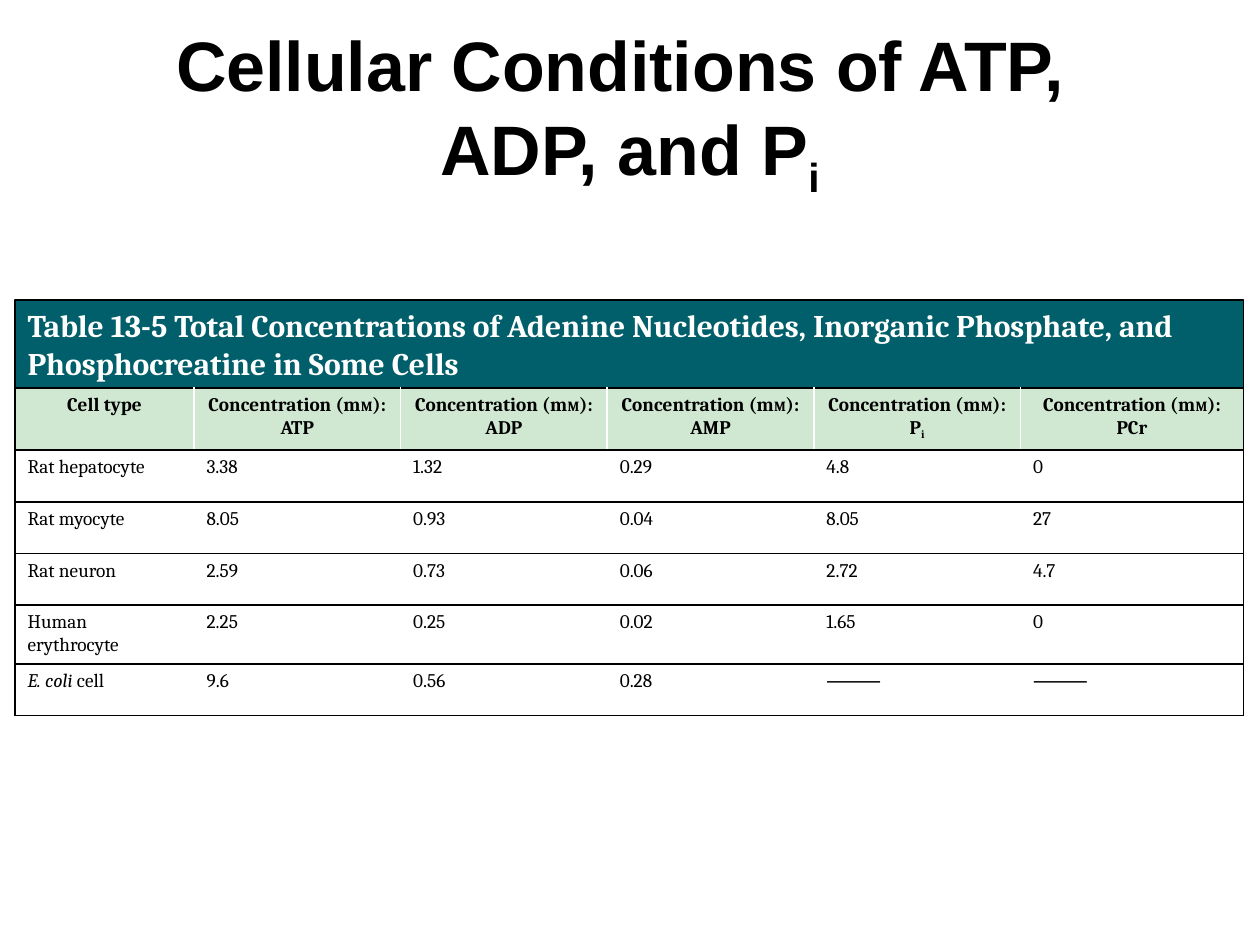
from dataclasses import dataclass

from lxml.etree import SubElement
from pptx import Presentation
from pptx.dml.color import RGBColor
from pptx.enum.shapes import MSO_SHAPE
from pptx.enum.text import MSO_ANCHOR, PP_ALIGN
from pptx.oxml.ns import qn
from pptx.util import Inches, Pt


@dataclass(frozen=True)
class Theme:
    title_font: str = "Arial"
    table_font: str = "Cambria"
    black: str = "000000"
    white: str = "FFFFFF"
    teal: str = "005F6A"
    mint: str = "D0E7D2"
    title_size: int = 40
    caption_size: int = 18
    cell_size: int = 11
    small_cap_size: int = 8


THEME = Theme()

LEFT, WIDTH = 0.12, 9.75
COLUMN_WIDTHS = [1.42, 1.64, 1.64, 1.64, 1.64, 1.77]
ROW_HEIGHT = 0.41

# Rich text is a list of (text, style) pieces; a newline is a line break
SUBSCRIPT_I = ("i", {"subscript": True})
TITLE = [("Cellular Conditions of ATP, \nADP, and P", {}), SUBSCRIPT_I]
CAPTION = [("Table 13-5 Total Concentrations of Adenine Nucleotides, "
            "Inorganic Phosphate, and Phosphocreatine in Some Cells", {})]
SPECIES = [
    [("ATP", {})],
    [("ADP", {})],
    [("AMP", {})],
    [("P", {}), SUBSCRIPT_I],
    [("PCr", {})],
]
CONCENTRATIONS = [
    ([("Rat hepatocyte", {})], ["3.38", "1.32", "0.29", "4.8", "0"]),
    ([("Rat myocyte", {})], ["8.05", "0.93", "0.04", "8.05", "27"]),
    ([("Rat neuron", {})], ["2.59", "0.73", "0.06", "2.72", "4.7"]),
    ([("Human erythrocyte", {})], ["2.25", "0.25", "0.02", "1.65", "0"]),
    ([("E. coli", {"italic": True}), (" cell", {})],
     ["9.6", "0.56", "0.28", "⸻", "⸻"]),
]


def rgb(color):
    return RGBColor.from_string(color)


def write_rich_text(paragraph, pieces, font, size, color, bold=False,
                    align=PP_ALIGN.LEFT):
    paragraph.alignment = align
    for text, style in pieces:
        for number, line in enumerate(text.split("\n")):
            if number:
                paragraph.add_line_break()
            if not line:
                continue
            run = paragraph.add_run()
            run.text = line
            run.font.name = font
            run.font.size = Pt(style.get("size", size))
            run.font.bold = bold
            run.font.italic = style.get("italic", False)
            run.font.color.rgb = rgb(color)
            if style.get("subscript"):
                run.font._element.set("baseline", "-25000")


def add_title(slide):
    title = slide.shapes.add_textbox(Inches(0), Inches(0.17), Inches(10), Inches(1.42))
    frame = title.text_frame
    frame.word_wrap = True
    frame.vertical_anchor = MSO_ANCHOR.MIDDLE
    write_rich_text(frame.paragraphs[0], TITLE, THEME.title_font, THEME.title_size,
                    THEME.black, bold=True, align=PP_ALIGN.CENTER)


def add_caption_bar(slide):
    bar = slide.shapes.add_shape(MSO_SHAPE.RECTANGLE, Inches(LEFT), Inches(2.38),
                                 Inches(WIDTH), Inches(0.71))
    bar.shadow.inherit = False
    bar.fill.solid()
    bar.fill.fore_color.rgb = rgb(THEME.teal)
    bar.line.color.rgb = rgb(THEME.black)
    bar.line.width = Pt(0.75)
    frame = bar.text_frame
    frame.word_wrap = True
    frame.vertical_anchor = MSO_ANCHOR.TOP
    write_rich_text(frame.paragraphs[0], CAPTION, THEME.table_font,
                    THEME.caption_size, THEME.white, bold=True)


def set_borders(cell, left, right):
    """Black rules above and below; side colours depend on the column."""
    properties = cell._tc.get_or_add_tcPr()
    sides = {"a:lnL": left, "a:lnR": right, "a:lnT": THEME.black, "a:lnB": THEME.black}
    # Borders must come before the fill
    for position, (tag, color) in enumerate(sides.items()):
        border = SubElement(properties, qn(tag), w=str(Pt(1)))
        fill = SubElement(border, qn("a:solidFill"))
        SubElement(fill, qn("a:srgbClr"), val=color)
        properties.insert(position, border)


def table_rows():
    unit = [("Concentration (m", {}), ("M", {"size": THEME.small_cap_size}), ("):\n", {})]
    header = [[("Cell type", {})]] + [unit + species for species in SPECIES]
    body = [[cell_type] + [[(value, {})] for value in values]
            for cell_type, values in CONCENTRATIONS]
    return [header] + body


def add_concentration_table(slide):
    rows = table_rows()
    table = slide.shapes.add_table(
        len(rows), len(COLUMN_WIDTHS), Inches(LEFT), Inches(3.08),
        Inches(WIDTH), Inches(ROW_HEIGHT * len(rows))).table
    table.horz_banding = False
    table.first_row = False
    for column, width in zip(table.columns, COLUMN_WIDTHS):
        column.width = Inches(width)

    last_column = len(COLUMN_WIDTHS) - 1
    for r, row in enumerate(rows):
        table.rows[r].height = Inches(ROW_HEIGHT)
        is_header = r == 0
        for c, pieces in enumerate(row):
            cell = table.cell(r, c)
            cell.fill.solid()
            cell.fill.fore_color.rgb = rgb(THEME.mint if is_header else THEME.white)
            set_borders(cell,
                        left=THEME.black if c == 0 else THEME.white,
                        right=THEME.black if c == last_column else THEME.white)
            write_rich_text(cell.text_frame.paragraphs[0], pieces, THEME.table_font,
                            THEME.cell_size, THEME.black, bold=is_header,
                            align=PP_ALIGN.CENTER if is_header else PP_ALIGN.LEFT)


def main():
    presentation = Presentation()
    presentation.slide_width = Inches(10)
    presentation.slide_height = Inches(7.5)
    slide = presentation.slides.add_slide(presentation.slide_layouts[6])

    add_title(slide)
    add_caption_bar(slide)
    add_concentration_table(slide)

    presentation.save("out.pptx")


if __name__ == "__main__":
    main()
